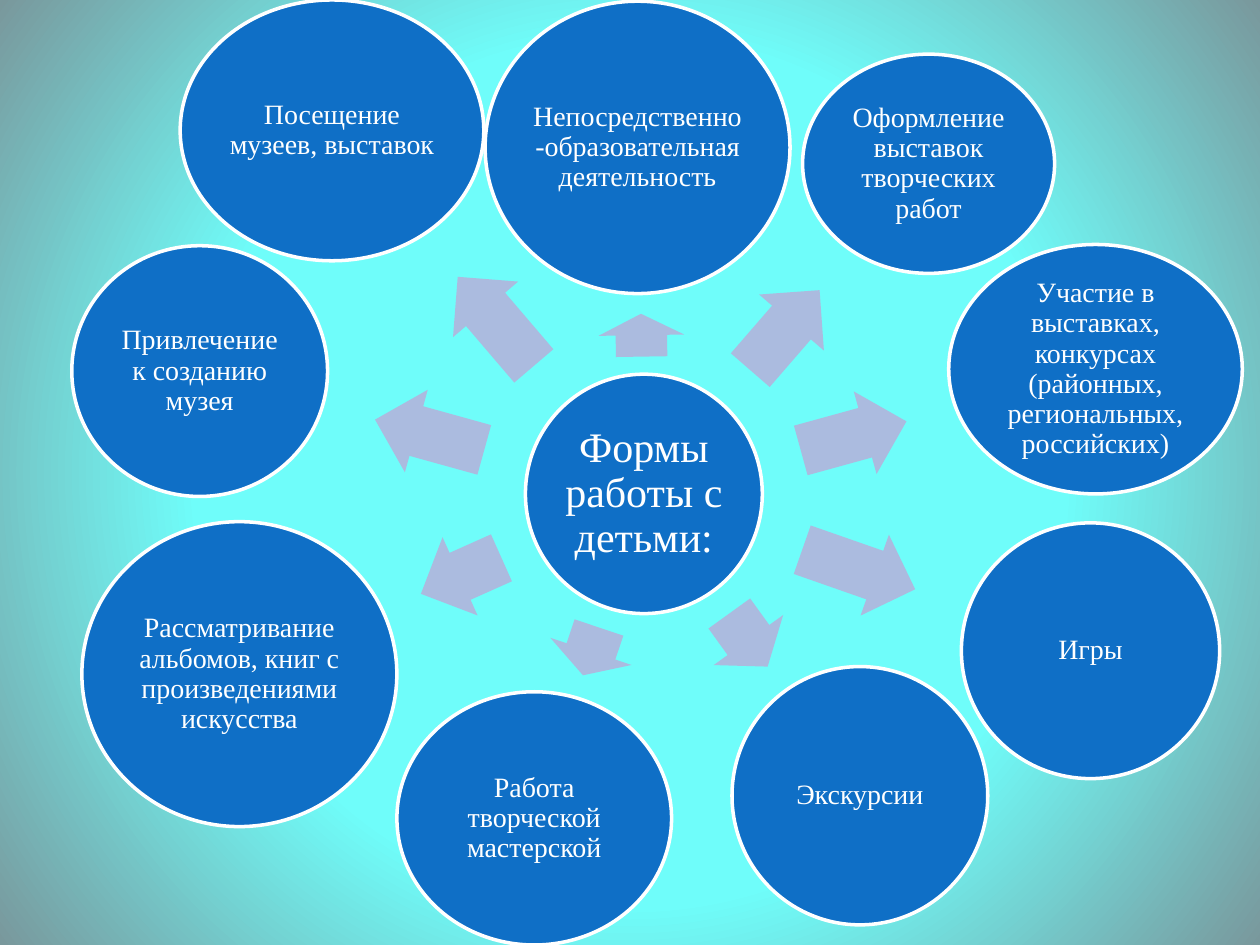
from dataclasses import dataclass
from pptx import Presentation
from pptx.dml.color import RGBColor
from pptx.enum.shapes import MSO_SHAPE
from pptx.enum.text import MSO_ANCHOR, PP_ALIGN
from pptx.oxml import parse_xml
from pptx.oxml.ns import nsdecls, qn
from pptx.util import Inches, Pt


@dataclass(frozen=True)
class Theme:
    font: str = "Times New Roman"
    circle: str = "0F6FC6"
    arrow: str = "ABBBDF"
    white: str = "FFFFFF"
    glow: str = "6FFDFA"
    edge: str = "79989C"
    hub_size: int = 24
    form_size: int = 16
    outline: int = 2


T = Theme()
prs = Presentation()
prs.slide_width, prs.slide_height = Inches(10), Inches(7.5)
COL, ROW = prs.slide_width / 100, prs.slide_height / 75
s = prs.slides.add_slide(prs.slide_layouts[6])


def add_shape(kind, x, y, w, h, color):
    sp = s.shapes.add_shape(kind, int(x * COL), int(y * ROW), int(w * COL), int(h * ROW))
    sp.shadow.inherit = False
    sp.fill.solid()
    sp.fill.fore_color.rgb = RGBColor.from_string(color)
    sp.line.fill.background()
    return sp


def add_circle(x, y, w, h, text, size):
    sp = add_shape(MSO_SHAPE.OVAL, x, y, w, h, T.circle)
    sp.line.color.rgb = RGBColor.from_string(T.white)
    sp.line.width = Pt(T.outline)
    tf = sp.text_frame
    tf.word_wrap = True
    tf.vertical_anchor = MSO_ANCHOR.MIDDLE
    tf.margin_left = tf.margin_right = int(size / 80 * COL)
    tf.margin_top = tf.margin_bottom = int(size / 80 * ROW)
    p = tf.paragraphs[0]
    p.alignment = PP_ALIGN.CENTER
    p.line_spacing = 0.9
    r = p.add_run()
    r.text = text
    r.font.name = T.font
    r.font.size = Pt(size)
    r.font.color.rgb = RGBColor.from_string(T.white)


s.background.fill.gradient()
grad = s.element.find(".//" + qn("a:gradFill"))
grad.getparent().replace(grad, parse_xml(
    f'<a:gradFill {nsdecls("a")} rotWithShape="1"><a:gsLst>'
    f'<a:gs pos="55000"><a:srgbClr val="{T.glow}"/></a:gs>'
    f'<a:gs pos="100000"><a:srgbClr val="{T.edge}"/></a:gs></a:gsLst>'
    '<a:path path="circle"><a:fillToRect l="50000" t="50000" r="50000" b="50000"/></a:path>'
    '</a:gradFill>'))

ARROW_H = 6.8
forms = [
    ("Непосредственно-образовательная деятельность", (38.5, 0.1, 24.2, 23.2), (49.2, 23.2, 3.4), 269.1),
    ("Оформление выставок творческих работ", (63.7, 4.3, 20, 17.4), (58.1, 22.8, 8.4), 310.9),
    ("Участие в выставках, конкурсах (районных, региональных, российских)",
     (75.3, 19.4, 23.3, 19.8), (63.4, 31.2, 8.7), 344.6),
    ("Игры", (76.3, 41.5, 20.5, 20.3), (63.4, 41.8, 9.5), 19.3),
    ("Экскурсии", (58.1, 52.9, 20.3, 20.5), (56.8, 47.4, 5.2), 54.2),
    ("Работа творческой мастерской", (31.5, 54.9, 21.8, 20.1), (44.9, 48.3, 4), 108.5),
    ("Рассматривание альбомов, книг с произведениями искусства",
     (6.5, 41.4, 25, 24.2), (33.1, 42.3, 7), 155.9),
    ("Привлечение к созданию музея", (5.7, 19.5, 20.3, 19.9), (29.6, 31.1, 9), 195.5),
    ("Посещение музеев, выставок", (14.3, 0, 24.1, 20.7), (34.7, 22.1, 9.3), 229.5),
]

add_circle(41.7, 29.7, 18.8, 19, "Формы работы с детьми:", T.hub_size)
for text, circle, (x, y, w), angle in forms:
    sp = add_shape(MSO_SHAPE.RIGHT_ARROW, x, y, w, ARROW_H, T.arrow)
    sp.adjustments[0], sp.adjustments[1] = 0.6, 0.5
    sp.rotation = angle
    add_circle(*circle, text, T.form_size)

prs.save("out.pptx")
